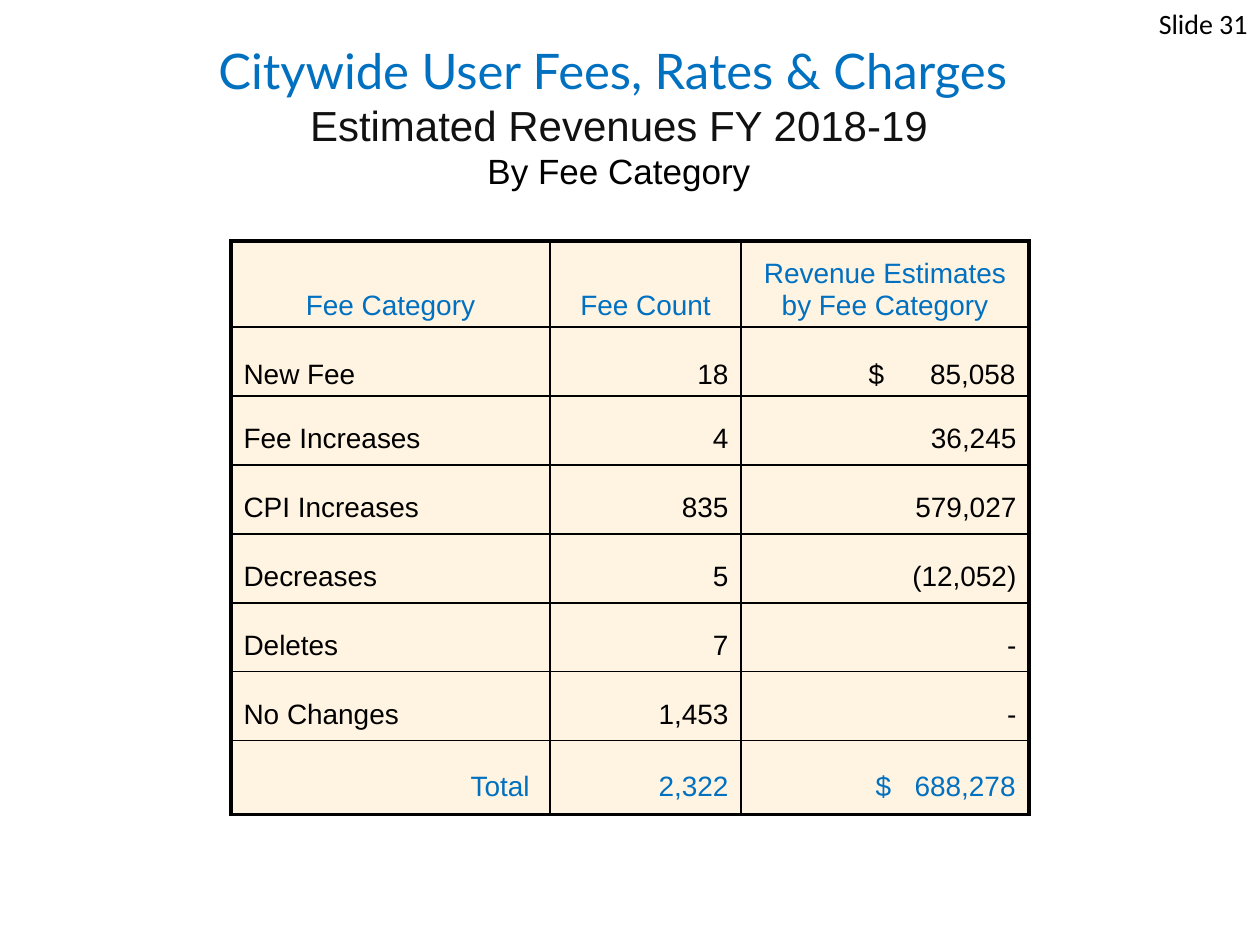
"""Build the fee revenue slide with its category table."""
from dataclasses import dataclass

from lxml import etree
from pptx import Presentation
from pptx.dml.color import RGBColor
from pptx.enum.text import MSO_ANCHOR, PP_ALIGN
from pptx.oxml.ns import qn
from pptx.util import Pt

LEFT, CENTER, RIGHT = PP_ALIGN.LEFT, PP_ALIGN.CENTER, PP_ALIGN.RIGHT
TOP, MIDDLE, BOTTOM = MSO_ANCHOR.TOP, MSO_ANCHOR.MIDDLE, MSO_ANCHOR.BOTTOM


@dataclass(frozen=True)
class Theme:
    blue: str = "0070C0"
    dark: str = "111111"
    black: str = "000000"
    cream: str = "FFF3E1"
    title_font: str = "Lato"
    body_font: str = "Arial"
    number_font: str = "Calibri"
    title: int = 28
    subtitle: int = 24
    caption: int = 20
    body: int = 16
    outer_line: float = 2.25
    inner_line: float = 1


THEME = Theme()

TITLE_LINES = [
    [("Citywide User Fees, Rates & Charges \v", THEME.title, THEME.title_font, THEME.blue),
     ("Estimated Revenues FY 2018-19", THEME.subtitle, THEME.body_font, THEME.dark)],
    [("By Fee Category", THEME.caption, THEME.body_font, THEME.black)],
]
SLIDE_NUMBER = [[("Slide 31", THEME.body, THEME.number_font, THEME.black)]]

FEES = [
    ("Fee Category", "Fee Count", "Revenue Estimates by Fee Category"),
    ("New Fee", "18", "\t$\t85,058"),
    ("Fee Increases", "4", "36,245"),
    ("CPI Increases", "835", "579,027"),
    ("Decreases", "5", "(12,052)"),
    ("Deletes", "7", "-"),
    ("No Changes", "1,453", "-"),
    ("Total ", "2,322", "\t$\t688,278"),
]
LAST_ROW, LAST_COLUMN = len(FEES) - 1, len(FEES[0]) - 1
COLUMN_WIDTHS = [319, 191, 288]
ROW_HEIGHTS = [86] + [69] * (LAST_ROW - 1) + [74]
BOTTOM_MARGINS = [6, 6] + [10] * (LAST_ROW - 2) + [12]
DOLLAR_TABS = {1: 115, LAST_ROW: 122}
AMOUNT_TAB = 262


def px(length):
    return round(length * 914400 / 126)


def apply(target, values):
    for name, value in values.items():
        setattr(target, name, value)


def write(para, text, size, font, color):
    span = para.add_run()
    apply(span, {"text": text})
    apply(span.font, {"size": Pt(size), "name": font})
    span.font.color.rgb = RGBColor.from_string(color)


def add_text(page, area, lines, align, anchor):
    frame = page.shapes.add_textbox(*map(px, area)).text_frame
    apply(frame, {"word_wrap": True, "vertical_anchor": anchor})
    for index, line in enumerate(lines):
        para = frame.add_paragraph() if index else frame.paragraphs[0]
        para.alignment = align
        for text, *style in line:
            first, *rest = text.split("\v")
            write(para, first, *style)
            if rest:
                para.add_line_break()


def add_borders(cell, row, column):
    edges = {"lnL": column == 0, "lnR": column == LAST_COLUMN,
             "lnT": row == 0, "lnB": row == LAST_ROW}
    properties = cell._tc.get_or_add_tcPr()
    for tag, is_outer in edges.items():
        width = THEME.outer_line if is_outer else THEME.inner_line
        line = etree.SubElement(properties, qn(f"a:{tag}"), w=str(Pt(width)))
        fill = etree.SubElement(line, qn("a:solidFill"))
        etree.SubElement(fill, qn("a:srgbClr"), val=THEME.black)


def add_tabs(para, stops):
    tabs = etree.SubElement(para._p.get_or_add_pPr(), qn("a:tabLst"))
    for position, align in stops:
        etree.SubElement(tabs, qn("a:tab"), pos=str(px(position)), algn=align)


def cell_align(row, column, text):
    if row == 0:
        return CENTER
    if "\t" in text or (column == 0 and row < LAST_ROW):
        return LEFT
    return RIGHT


def fill_cell(cell, row, column, text):
    add_borders(cell, row, column)
    cell.fill.solid()
    cell.fill.fore_color.rgb = RGBColor.from_string(THEME.cream)
    apply(cell, {"vertical_anchor": BOTTOM, "margin_bottom": px(BOTTOM_MARGINS[row])})
    para = cell.text_frame.paragraphs[0]
    para.alignment = cell_align(row, column, text)
    if "\t" in text:
        add_tabs(para, [(DOLLAR_TABS[row], "l"), (AMOUNT_TAB, "r")])
    color = THEME.blue if row in (0, LAST_ROW) else THEME.black
    write(para, text, THEME.body, THEME.body_font, color)


def add_fee_table(page, left, top):
    area = (left, top, sum(COLUMN_WIDTHS), sum(ROW_HEIGHTS))
    table = page.shapes.add_table(len(FEES), len(FEES[0]), *map(px, area)).table
    apply(table, {"first_row": False, "horz_banding": False})
    for column, width in zip(table.columns, COLUMN_WIDTHS):
        column.width = px(width)
    for row, height in zip(table.rows, ROW_HEIGHTS):
        row.height = px(height)
    for row, texts in enumerate(FEES):
        for column, text in enumerate(texts):
            fill_cell(table.cell(row, column), row, column, text)


def main():
    deck = Presentation()
    apply(deck, {"slide_width": px(1260), "slide_height": px(945)})
    page = deck.slides.add_slide(deck.slide_layouts[6])
    add_text(page, (94, 53, 1050, 126), TITLE_LINES, CENTER, MIDDLE)
    add_fee_table(page, 231, 241)
    add_text(page, (966, 0, 294, 63), SLIDE_NUMBER, RIGHT, TOP)
    deck.save("out.pptx")


if __name__ == "__main__":
    main()
